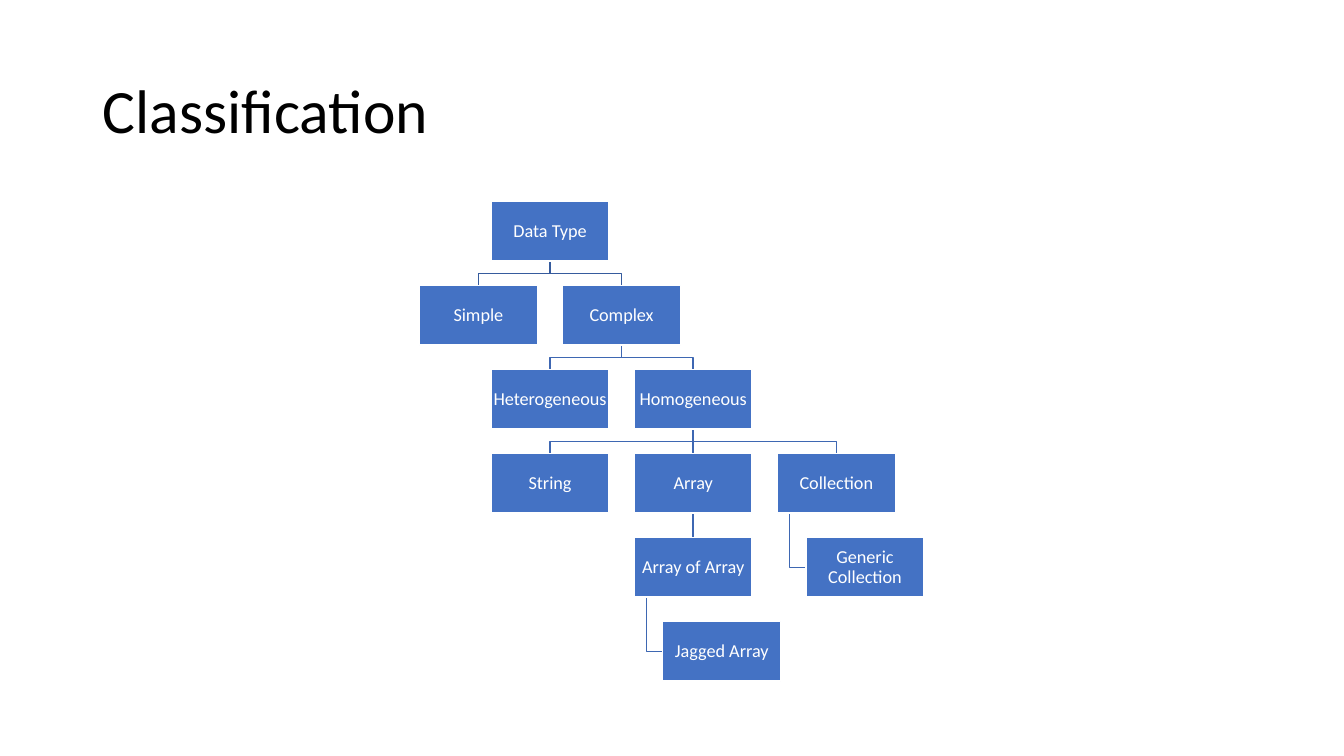
from dataclasses import dataclass

from lxml import etree
from pptx import Presentation
from pptx import util as u
from pptx.dml.color import RGBColor
from pptx.enum import shapes, text
from pptx.oxml.ns import qn
from pptx.shapes.autoshape import Shape
from pptx.shapes.connector import Connector
from pptx.slide import Slide
from pptx.text.text import TextFrame

COLORS = {
    "title": "000000",
    "box": "4472C4",
    "edge": "FFFFFF",
    "label": "FFFFFF",
    "root branch": "365B9D",
    "branch": "3E67B2",
}
FONT = "Calibri"
LEFT, TOP = 4.87, 2.0
COLUMN_STEP, ROW_STEP = 1.42, 2.5 / 3
BOX_WIDTH, BOX_HEIGHT = 1.17, 0.59
HANG_OFFSET = 0.12
TOP_SIDE, BOTTOM_SIDE = 0, 2


@dataclass(frozen=True)
class Node:
    label: str
    column: float
    row: int
    parent: str = ""
    hanging: bool = False

    @property
    def left(self) -> float:
        return LEFT + self.column * COLUMN_STEP

    @property
    def top(self) -> float:
        return TOP + self.row * ROW_STEP

    @property
    def center(self) -> float:
        return self.left + BOX_WIDTH / 2

    @property
    def bottom(self) -> float:
        return self.top + BOX_HEIGHT


NODES = [
    Node("Data Type", 0, 0),
    Node("Simple", -0.5, 1, "Data Type"),
    Node("Complex", 0.5, 1, "Data Type"),
    Node("Heterogeneous", 0, 2, "Complex"),
    Node("Homogeneous", 1, 2, "Complex"),
    Node("String", 0, 3, "Homogeneous"),
    Node("Array", 1, 3, "Homogeneous"),
    Node("Array of Array", 1, 4, "Array"),
    Node("Jagged Array", 1.2, 5, "Array of Array", hanging=True),
    Node("Collection", 2, 3, "Homogeneous"),
    Node("Generic Collection", 2.2, 4, "Collection", hanging=True),
]


def color(name: str) -> RGBColor:
    return RGBColor.from_string(COLORS[name])


def format_text(frame: TextFrame, size: int, color_name: str,
                align: text.PP_ALIGN) -> None:
    frame.word_wrap = True
    frame.auto_size = text.MSO_AUTO_SIZE.NONE
    frame.vertical_anchor = text.MSO_ANCHOR.MIDDLE
    for para in frame.paragraphs:
        para.alignment = align
        para.line_spacing = 0.9
        for span in para.runs:
            span.font.name = FONT
            span.font.size = u.Pt(size)
            span.font.color.rgb = color(color_name)


def add_title(page: Slide, wording: str) -> None:
    title = page.shapes.title
    title.left, title.top = u.Inches(0.92), u.Inches(0.4)
    title.width, title.height = u.Inches(11.5), u.Inches(1.45)
    title.text_frame.text = wording
    format_text(title.text_frame, 44, "title", text.PP_ALIGN.LEFT)


def add_box(page: Slide, node: Node) -> Shape:
    box = page.shapes.add_shape(
        shapes.MSO_SHAPE.RECTANGLE, u.Inches(node.left), u.Inches(node.top),
        u.Inches(BOX_WIDTH), u.Inches(BOX_HEIGHT))
    box.shadow.inherit = False
    box.fill.solid()
    box.fill.fore_color.rgb = color("box")
    box.line.color.rgb = color("edge")
    box.line.width = u.Pt(1)
    frame = box.text_frame
    frame.margin_left = frame.margin_right = u.Inches(0.01)
    frame.margin_top = frame.margin_bottom = u.Inches(0.01)
    frame.text = node.label
    format_text(frame, 13, "label", text.PP_ALIGN.CENTER)
    return box


def add_straight_branch(page: Slide, upper: Shape, lower: Shape) -> Connector:
    branch = page.shapes.add_connector(shapes.MSO_CONNECTOR.STRAIGHT, 0, 0, 0, 0)
    branch.begin_connect(upper, BOTTOM_SIDE)
    branch.end_connect(lower, TOP_SIDE)
    etree.SubElement(branch.element.spPr, qn("a:effectLst"))
    return branch


def add_bent_branch(page: Slide, parent: Node, child: Node) -> Shape:
    """Draw an elbow to the child's top, or to its left side if it hangs."""
    if child.hanging:
        stem = parent.left + HANG_OFFSET
        middle = child.top + BOX_HEIGHT / 2
        points = [(stem, parent.bottom), (stem, middle), (child.left, middle)]
    else:
        middle = (parent.bottom + child.top) / 2
        points = [(parent.center, parent.bottom), (parent.center, middle),
                  (child.center, middle), (child.center, child.top)]
    start, *rest = [(u.Inches(x), u.Inches(y)) for x, y in points]
    builder = page.shapes.build_freeform(*start)
    builder.add_line_segments(rest, close=False)
    branch = builder.convert_to_shape()
    branch.shadow.inherit = False
    branch.fill.background()
    return branch


def add_tree(page: Slide, nodes: list[Node]) -> None:
    by_label = {node.label: node for node in nodes}
    boxes = {node.label: add_box(page, node) for node in nodes}
    root = nodes[0]
    for child in nodes[1:]:
        parent = by_label[child.parent]
        if child.column == parent.column:
            branch = add_straight_branch(page, boxes[parent.label], boxes[child.label])
        else:
            branch = add_bent_branch(page, parent, child)
        branch.line.color.rgb = color("root branch" if parent is root else "branch")
        branch.line.width = u.Pt(1)
        # Branches lie behind every box.
        boxes[root.label].element.addprevious(branch.element)


def main() -> None:
    deck = Presentation()
    deck.slide_width, deck.slide_height = u.Inches(13.33), u.Inches(7.5)
    page = deck.slides.add_slide(deck.slide_layouts.get_by_name("Title Only"))
    add_title(page, "Classification")
    add_tree(page, NODES)
    deck.save("out.pptx")


if __name__ == "__main__":
    main()
